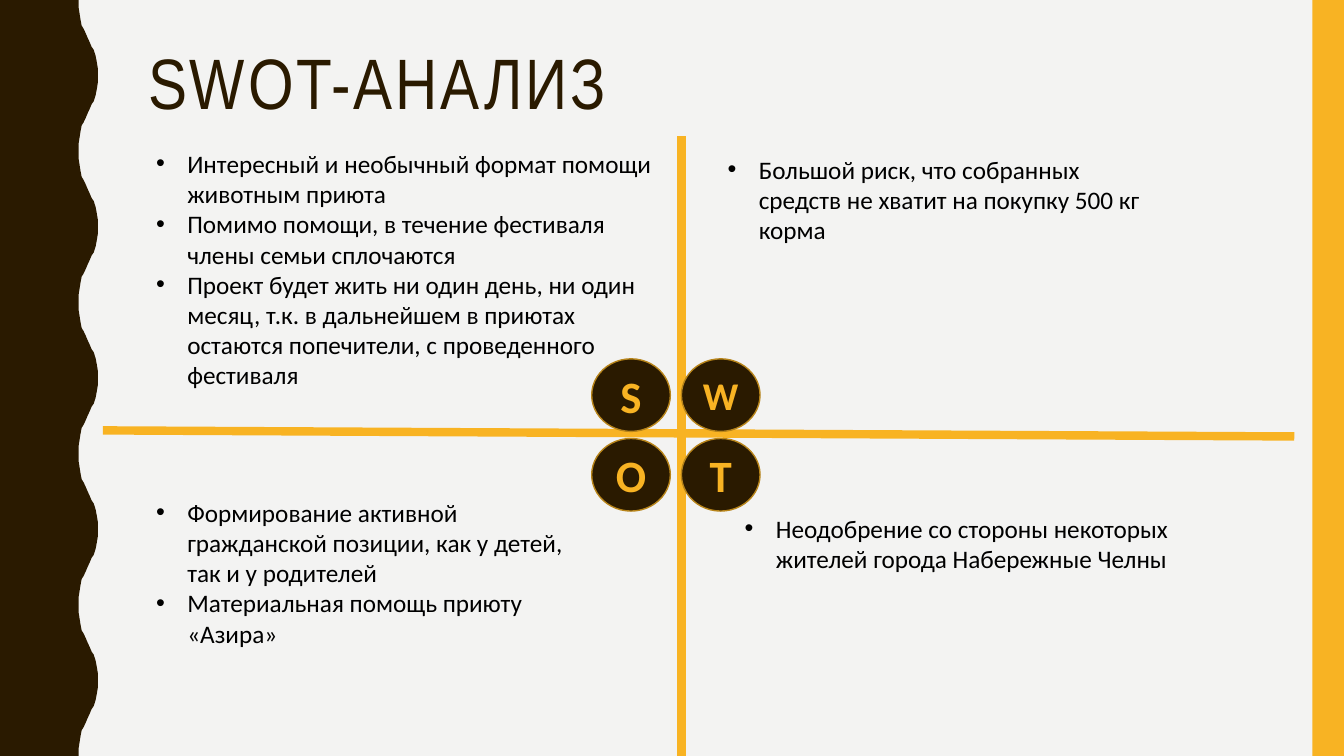
from dataclasses import dataclass

from pptx import Presentation
from pptx.dml import color
from pptx.enum import shapes, text
from pptx.oxml import ns, xmlchemy
from pptx.util import Inches, Pt

BROWN = color.RGBColor(0x2A, 0x1A, 0x00)
YELLOW = color.RGBColor(0xF8, 0xB3, 0x23)
OCHRE = color.RGBColor(0xB7, 0x84, 0x1A)
PAPER = color.RGBColor(0xF3, 0xF3, 0xF2)
BLACK = color.RGBColor(0x00, 0x00, 0x00)

WIDTH, HEIGHT = Inches(13.33), Inches(7.5)
COLUMNS, ROWS = 160, 90
WAVES = 5
TROUGH, CREST = 9.36, 11.64
HALF_WAVE = [
    (0, 0), (0, 0.05), (0.05, 0.09), (0.1, 0.13), (0.16, 0.17),
    (0.26, 0.19), (0.37, 0.22), (0.47, 0.25), (0.58, 0.28), (0.68, 0.31),
    (0.79, 0.33), (0.89, 0.37), (0.95, 0.41), (1, 0.45), (1, 0.5),
]


@dataclass(frozen=True)
class Area:
    column: float
    row: float
    columns: float
    rows: float

    def place(self) -> tuple[int, int, int, int]:
        return across(self.column), down(self.row), across(self.columns), down(self.rows)


@dataclass(frozen=True)
class Badge:
    letter: str
    column: int
    row: int
    size: int = 32


@dataclass(frozen=True)
class Quadrant:
    area: Area
    points: tuple[str, ...]


@dataclass(frozen=True)
class Axis:
    start: tuple[float, float]
    end: tuple[float, float]


TITLE_AREA = Area(16.44, 5.04, 133.56, 19.56)
STRIPE_AREA = Area(156.24, 0, 3.76, ROWS)
AXES = [Axis((81.12, 16.2), (81.12, ROWS)), Axis((12.24, 51.24), (154.08, 51.96))]
BADGES = [Badge("S", 0, 0), Badge("W", 1, 0, 28), Badge("O", 0, 1), Badge("T", 1, 1)]
QUADRANTS = [
    Quadrant(Area(17.4, 17.04, 62.4, 30.24), (
        "Интересный и необычный формат помощи животным приюта",
        "Помимо помощи, в течение фестиваля члены семьи сплочаются",
        "Проект будет жить ни один день, ни один месяц, т.к. в дальнейшем "
        "в приютах остаются попечители, с проведенного фестиваля",
    )),
    Quadrant(Area(85.44, 17.76, 53.28, 12.12), (
        "Большой риск, что собранных средств не хватит на покупку 500 кг корма",
    )),
    Quadrant(Area(17.4, 58.56, 54.24, 19.44), (
        "Формирование активной гражданской позиции, как у детей, так и у родителей",
        "Материальная помощь приюту «Азира»",
    )),
    Quadrant(Area(87.48, 60.48, 60.12, 8.52), (
        "Неодобрение со стороны некоторых жителей города Набережные Челны",
    )),
]


def across(columns: float) -> int:
    return round(WIDTH * columns / COLUMNS)


def down(rows: float) -> int:
    return round(HEIGHT * rows / ROWS)


def apply(target, **values) -> None:
    for name, value in values.items():
        setattr(target, name, value)


def format_font(font, tint: color.RGBColor, **values) -> None:
    apply(font, **values)
    font.color.rgb = tint


def paint(shape, tint: color.RGBColor) -> None:
    shape.shadow.inherit = False
    shape.fill.solid()
    shape.fill.fore_color.rgb = tint
    shape.line.fill.background()


def draw_wave(page) -> None:
    period = ROWS / WAVES
    mirrored = [(rise, 1 - share) for rise, share in reversed(HALF_WAVE[1:-1])]
    edge = [
        (across(TROUGH + rise * (CREST - TROUGH)), down((wave + share) * period))
        for wave in range(WAVES)
        for rise, share in HALF_WAVE + mirrored
    ]
    builder = page.shapes.build_freeform(0, 0)
    builder.add_line_segments(edge + [(across(TROUGH), HEIGHT), (0, HEIGHT)], close=True)
    paint(builder.convert_to_shape(), BROWN)


def draw_stripe(page) -> None:
    paint(page.shapes.add_shape(shapes.MSO_SHAPE.RECTANGLE, *STRIPE_AREA.place()), YELLOW)


def write_title(page) -> None:
    title = page.shapes.title
    left, top, width, height = TITLE_AREA.place()
    apply(title, left=left, top=top, width=width, height=height)
    frame = title.text_frame
    apply(frame, word_wrap=True, vertical_anchor=text.MSO_ANCHOR.TOP,
          auto_size=text.MSO_AUTO_SIZE.NONE)
    para = frame.paragraphs[0]
    apply(para, alignment=text.PP_ALIGN.LEFT, line_spacing=0.9)
    span = para.add_run()
    span.text = "SWOT-АНАЛИЗ"
    format_font(span.font, BROWN, name="Arial Narrow", size=Pt(51))
    span.font._element.set("spc", "200")


def draw_axis(page, axis: Axis) -> None:
    (left, top), (right, bottom) = axis.start, axis.end
    line = page.shapes.add_connector(
        shapes.MSO_CONNECTOR.STRAIGHT, across(left), down(top), across(right), down(bottom))
    line.line.color.rgb = YELLOW
    line.line.width = Pt(6)
    line._element.spPr.append(xmlchemy.OxmlElement("a:effectLst"))


def draw_badge(page, badge: Badge) -> None:
    area = Area(70.44 + 10.68 * badge.column, 42.72 + 9.48 * badge.row, 9.36, 8.64)
    circle = page.shapes.add_shape(shapes.MSO_SHAPE.OVAL, *area.place())
    paint(circle, BROWN)
    circle.line.color.rgb = OCHRE
    circle.line.width = Pt(1)
    circle.text_frame.vertical_anchor = text.MSO_ANCHOR.MIDDLE
    para = circle.text_frame.paragraphs[0]
    apply(para, text=badge.letter, alignment=text.PP_ALIGN.CENTER)
    format_font(para.runs[0].font, YELLOW, name="Calibri", size=Pt(badge.size), bold=True)


def add_bullet(para) -> None:
    properties = para._p.get_or_add_pPr()
    indent = Inches(0.31)
    properties.set("marL", str(indent))
    properties.set("indent", str(-indent))
    for tag, name, value in (("a:buFont", "typeface", "Arial"), ("a:buChar", "char", "•")):
        mark = xmlchemy.OxmlElement(tag)
        mark.set(name, value)
        properties.append(mark)


def write_quadrant(page, quadrant: Quadrant) -> None:
    frame = page.shapes.add_textbox(*quadrant.area.place()).text_frame
    apply(frame, word_wrap=True, auto_size=text.MSO_AUTO_SIZE.SHAPE_TO_FIT_TEXT)
    for index, point in enumerate(quadrant.points):
        para = frame.add_paragraph() if index else frame.paragraphs[0]
        add_bullet(para)
        span = para.add_run()
        span.text = point
        format_font(span.font, BLACK, name="Calibri", size=Pt(18))


def main() -> None:
    deck = Presentation()
    apply(deck, slide_width=WIDTH, slide_height=HEIGHT)
    page = deck.slides.add_slide(deck.slide_layouts.get_by_name("Title Only"))
    page.background.fill.solid()
    page.background.fill.fore_color.rgb = PAPER
    draw_wave(page)
    draw_stripe(page)
    write_title(page)
    for axis in AXES:
        draw_axis(page, axis)
    for badge in BADGES:
        draw_badge(page, badge)
    for quadrant in QUADRANTS:
        write_quadrant(page, quadrant)
    deck.save("out.pptx")


if __name__ == "__main__":
    main()
